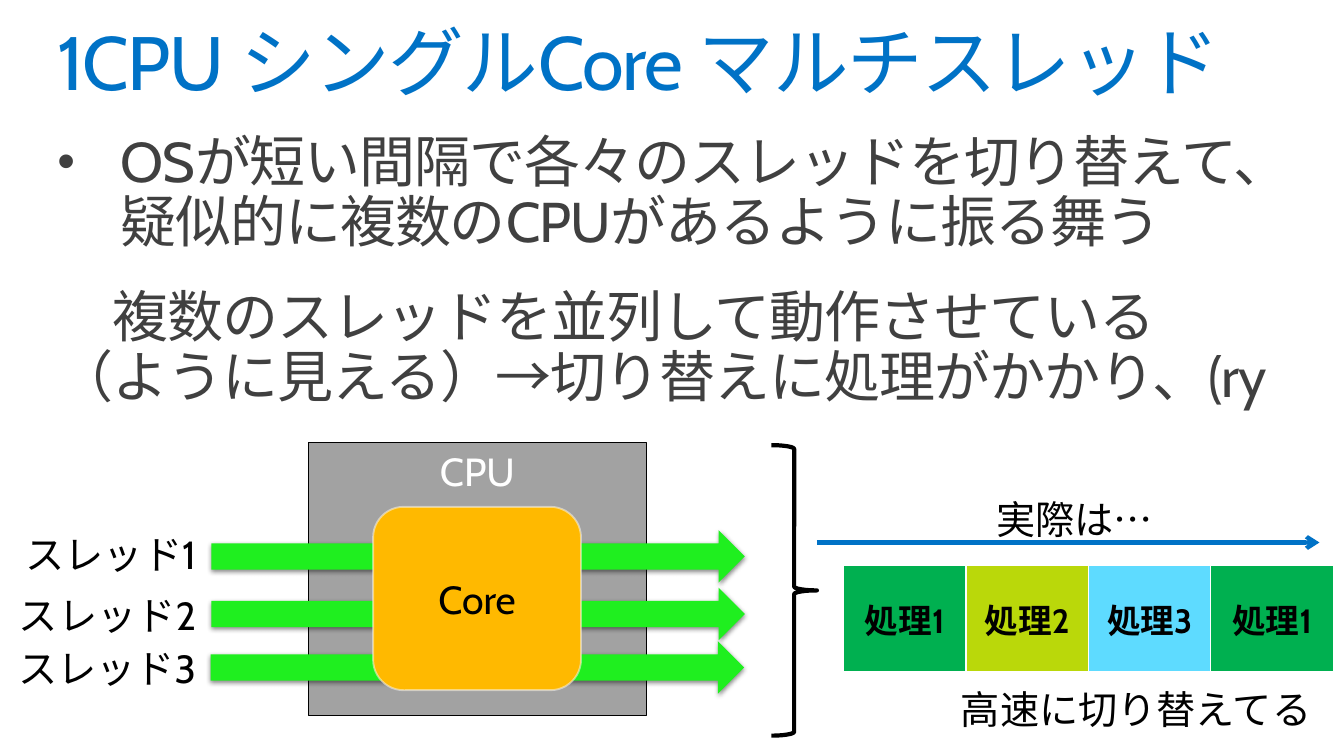
from pptx import Presentation
from pptx.dml.color import RGBColor
from pptx.enum.shapes import MSO_CONNECTOR, MSO_SHAPE
from pptx.enum.text import MSO_ANCHOR, PP_ALIGN
from pptx.oxml import parse_xml
from pptx.oxml.ns import nsdecls, qn
from pptx.util import Pt
from lxml import etree

LEFT, CENTER, RIGHT = PP_ALIGN.LEFT, PP_ALIGN.CENTER, PP_ALIGN.RIGHT
TOP, MIDDLE = MSO_ANCHOR.TOP, MSO_ANCHOR.MIDDLE
RECT, ROUND = MSO_SHAPE.RECTANGLE, MSO_SHAPE.ROUNDED_RECTANGLE
ARROW, BRACE = MSO_SHAPE.RIGHT_ARROW, MSO_SHAPE.RIGHT_BRACE
STRAIGHT = MSO_CONNECTOR.STRAIGHT

FONT = "Cabin"
BLACK, WHITE, BLUE, GRAY = "000000", "FFFFFF", "0072C6", "404040"
GREEN, LIME, SKY = "00B050", "BAD80A", "5EDBFF"


def color(code):
    return RGBColor.from_string(code)


def style(para, size, code=BLACK, align=LEFT, bold=False):
    para.alignment = align
    font = para.font
    font.name, font.size, font.bold = FONT, Pt(size), bold
    font.color.rgb = color(code)


def inset(frame, gap, anchor=TOP):
    frame.word_wrap = True
    frame.vertical_anchor = anchor
    frame.margin_left = frame.margin_right = Pt(gap)
    frame.margin_top = frame.margin_bottom = Pt(gap)


def text(slide, box, lines, size=28, code=BLACK, align=CENTER):
    frame = slide.shapes.add_textbox(*map(Pt, box)).text_frame
    inset(frame, 0)
    frame.text = "\n".join(lines)
    for para in frame.paragraphs:
        style(para, size, code, align)
    return frame.paragraphs


def dense(para, track, before=0):
    """Tighten line and letter spacing; track is in hundredths of a point."""
    para.line_spacing = 0.9
    para.space_before = Pt(before)
    for run in para.runs:
        run.font.size = para.font.size
        run.font._element.set("spc", str(track))


def bullet(para, indent):
    props = para._p.get_or_add_pPr()
    props.set("marL", str(Pt(indent)))
    props.set("indent", str(Pt(-indent)))
    marks = (("buSzPct", "val", "90000"), ("buFont", "typeface", "Arial"),
             ("buChar", "char", "•"))
    spot = props.index(props.find(qn("a:defRPr")))
    for step, (tag, key, value) in enumerate(marks):
        mark = etree.Element(qn("a:" + tag))
        mark.set(key, value)
        props.insert(spot + step, mark)


def shape(slide, kind, box, fill=None, line=None, width=0.75):
    item = slide.shapes.add_shape(kind, *map(Pt, box))
    item.shadow.inherit = False
    if fill:
        item.fill.solid()
        item.fill.fore_color.rgb = color(fill)
    else:
        item.fill.background()
    if line:
        item.line.color.rgb = color(line)
        item.line.width = Pt(width)
    else:
        item.line.fill.background()
    return item


def label(item, words, code, anchor):
    frame = item.text_frame
    inset(frame, 3.6, anchor)
    frame.text = words
    style(frame.paragraphs[0], 28, code, CENTER)


def shade(item):
    """Put a soft shadow below the shape."""
    effect = item._element.spPr.find(qn("a:effectLst"))
    effect.append(parse_xml(
        f'<a:outerShdw {nsdecls("a")} blurRad="{Pt(3.5)}" dist="{Pt(1.1)}"'
        ' dir="5400000" rotWithShape="0"><a:srgbClr val="000000">'
        '<a:alpha val="45000"/></a:srgbClr></a:outerShdw>'))


def fade(item):
    """Make the outline half transparent."""
    tint = item.line._ln.find(".//" + qn("a:srgbClr"))
    etree.SubElement(tint, qn("a:alpha")).set("val", "50000")


def axis(slide, left, right, y):
    line = slide.shapes.add_connector(STRAIGHT, Pt(left), Pt(y), Pt(right), Pt(y))
    line.line.color.rgb = color(BLUE)
    line.line.width = Pt(3)
    etree.SubElement(line.line._ln, qn("a:tailEnd")).set("type", "arrow")
    etree.SubElement(line._element.spPr, qn("a:effectLst"))


def border(cell):
    props = cell._tc.get_or_add_tcPr()
    sides = (("lnL", 1), ("lnR", 1), ("lnT", 1), ("lnB", 3))
    for spot, (tag, width) in enumerate(sides):
        props.insert(spot, parse_xml(
            f'<a:{tag} {nsdecls("a")} w="{Pt(width)}"><a:solidFill>'
            f'<a:srgbClr val="{WHITE}"/></a:solidFill></a:{tag}>'))


def table(slide, box, cells):
    grid = slide.shapes.add_table(1, len(cells), *map(Pt, box)).table
    for cell, (words, fill) in zip(grid.iter_cells(), cells):
        cell.text = words
        cell.vertical_anchor = MIDDLE
        cell.fill.solid()
        cell.fill.fore_color.rgb = color(fill)
        style(cell.text_frame.paragraphs[0], 24, BLACK, CENTER, True)
        border(cell)


def main():
    deck = Presentation()
    deck.slide_width, deck.slide_height = Pt(960), Pt(540)
    slide = deck.slides.add_slide(deck.slide_layouts[6])

    body = text(slide, (41, 95.8, 878, 426), [
        "OSが短い間隔で各々のスレッドを切り替えて、疑似的に複数のCPUがあるように振る舞う",
        "　複数のスレッドを並列して動作させている　（ように見える）→切り替えに処理がかかり、(ry",
    ], 40, GRAY, LEFT)
    for para in body:
        dense(para, -70, 24)
    bullet(body[0], 45)
    title = text(slide, (41, 18, 878, 59), ["1CPU シングルCore マルチスレッド"],
                 54, BLUE, LEFT)
    dense(title[0], -100)

    cpu = shape(slide, RECT, (220.5, 316, 241, 195), "A2A2A2", BLACK)
    label(cpu, "CPU", WHITE, TOP)
    threads = ((151, 378.7, 378.7), (151, 419.8, 422), (150.5, 458, 460))
    for left, top, _ in threads:
        shade(shape(slide, ARROW, (left, top, 381, 37.5), "1FEF1F"))
    core = shape(slide, ROUND, (266.5, 362, 148.5, 131), "FFB900", "F9F9F9", 1.35)
    fade(core)
    label(core, "Core", BLACK, MIDDLE)
    for number, (_, _, top) in enumerate(threads, 1):
        text(slide, (-8.5, top, 148.5, 34), [f"スレッド{number}"], align=RIGHT)

    shape(slide, BRACE, (551, 318, 32.5, 207.5), None, BLACK, 3)
    text(slide, (693.5, 354, 148.5, 34), ["実際は…"])
    table(slide, (602.5, 403.5, 350, 77), [
        ("処理1", GREEN), ("処理2", LIME), ("処理3", SKY), ("処理1", GREEN)])
    axis(slide, 583.5, 942.5, 387.5)
    text(slide, (672.5, 489.5, 278, 34), ["高速に切り替えてる"])

    deck.save("out.pptx")


if __name__ == "__main__":
    main()
